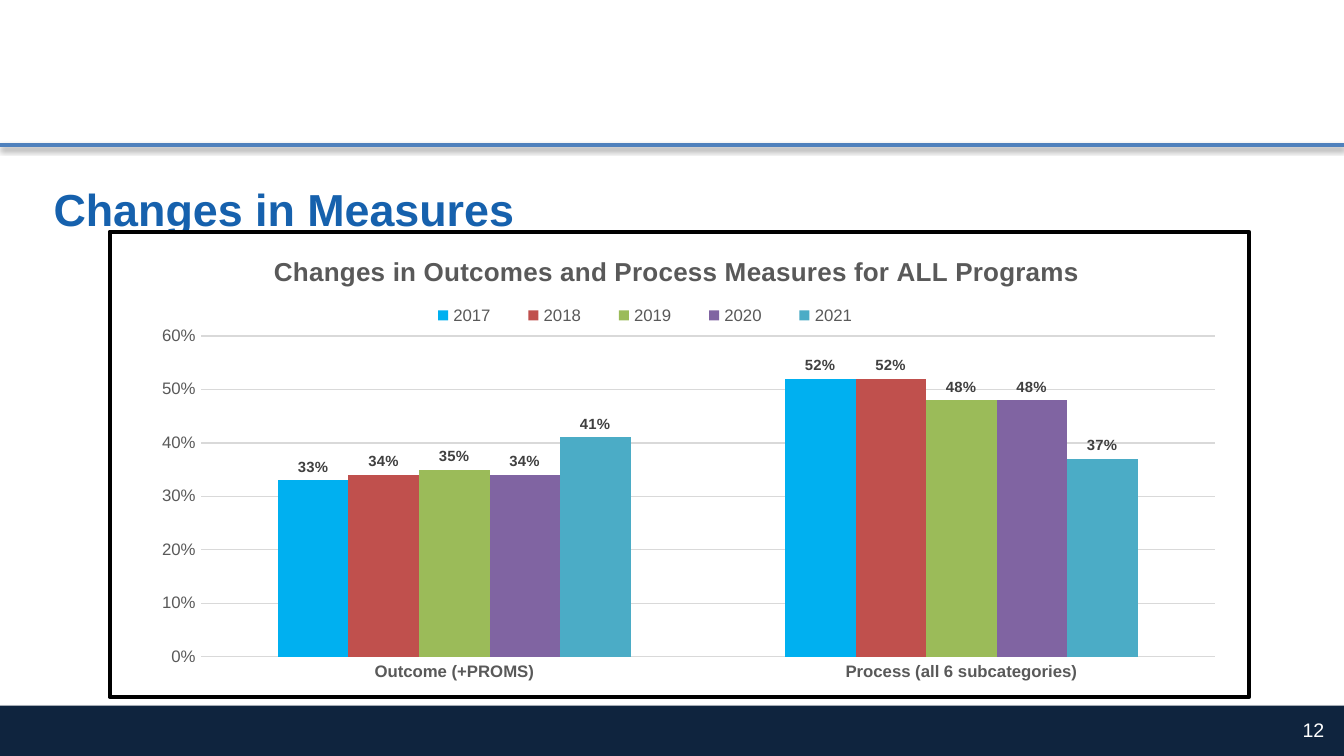
from lxml import etree
from pptx import Presentation
from pptx.chart.data import CategoryChartData
from pptx.dml.color import RGBColor
from pptx.enum.chart import XL_CHART_TYPE, XL_LABEL_POSITION, XL_LEGEND_POSITION, XL_TICK_MARK
from pptx.enum.shapes import MSO_CONNECTOR, MSO_SHAPE
from pptx.enum.text import MSO_ANCHOR, PP_ALIGN
from pptx.oxml import parse_xml
from pptx.oxml.ns import nsdecls, qn
from pptx.util import Pt

COLUMN = XL_CHART_TYPE.COLUMN_CLUSTERED
OUTSIDE = XL_LABEL_POSITION.OUTSIDE_END
TOP = XL_LEGEND_POSITION.TOP
NO_TICK = XL_TICK_MARK.NONE
STRAIGHT = MSO_CONNECTOR.STRAIGHT
RECTANGLE = MSO_SHAPE.RECTANGLE
MIDDLE = MSO_ANCHOR.MIDDLE
LEFT, RIGHT = PP_ALIGN.LEFT, PP_ALIGN.RIGHT

COLORS = {
    "navy": "0F243E", "rule": "4F81BD", "heading": "1661AD", "white": "FFFFFF",
    "black": "000000", "grey": "595959", "label": "404040", "grid": "D9D9D9",
}
FORMATS = {
    "heading": {"size": Pt(24), "bold": True, "color": "heading"},
    "number": {"size": Pt(10.5), "bold": False, "color": "white"},
    "chart": {"size": Pt(10), "bold": False, "color": "black"},
    "chart_title": {"size": Pt(14), "bold": True, "color": "grey"},
    "categories": {"size": Pt(9), "bold": True, "color": "grey"},
    "values": {"size": Pt(9), "bold": False, "color": "grey"},
    "label": {"size": Pt(8), "bold": True, "color": "label"},
}
CATEGORIES = ["Outcome (+PROMS)", "Process (all 6 subcategories)"]
SERIES = {
    "2017": ("00B0F0", (0.33, 0.52)),
    "2018": ("C0504D", (0.34, 0.52)),
    "2019": ("9BBB59", (0.35, 0.48)),
    "2020": ("8064A2", (0.34, 0.48)),
    "2021": ("4BACC6", (0.41, 0.37)),
}


def rgb(name):
    """Return the named colour."""
    return RGBColor.from_string(COLORS[name])


def style_font(font, style):
    """Apply a named text format to a font."""
    font.name = "Arial"
    for attribute, value in FORMATS[style].items():
        if attribute == "color":
            font.color.rgb = rgb(value)
        else:
            setattr(font, attribute, value)


def add_shadow(shape, opacity, distance):
    """Give a shape a soft shadow falling straight down."""
    shape._element.spPr.append(parse_xml(
        f'<a:effectLst {nsdecls("a")}><a:outerShdw blurRad="{Pt(3.1)}" dist="{Pt(distance)}" '
        f'dir="5400000" rotWithShape="0"><a:srgbClr val="{COLORS["black"]}">'
        f'<a:alpha val="{opacity * 1000}"/></a:srgbClr></a:outerShdw></a:effectLst>'))


def add_text(slide, box, text, style, alignment):
    """Add one line of text, centred vertically in its box."""
    frame = slide.shapes.add_textbox(*map(Pt, box)).text_frame
    frame.word_wrap = True
    frame.vertical_anchor = MIDDLE
    paragraph = frame.paragraphs[0]
    paragraph.alignment = alignment
    run = paragraph.add_run()
    run.text = text
    style_font(run.font, style)


def add_header(slide, box):
    """Draw the rule at the top of the box and the heading below it."""
    left, top, width, height = box
    rule = slide.shapes.add_connector(STRAIGHT, Pt(left), Pt(top), Pt(left + width), Pt(top))
    rule.line.color.rgb = rgb("rule")
    rule.line.width = Pt(2)
    add_shadow(rule, 38, 1.6)
    add_text(slide, (left + 21.6, top + 13.7, 291.6, height - 13.7),
             "Changes in Measures", "heading", LEFT)


def add_footer(slide, box):
    """Draw the dark band and the slide number at its right."""
    left, top, width, height = box
    band = slide.shapes.add_shape(RECTANGLE, *map(Pt, box))
    band.fill.solid()
    band.fill.fore_color.rgb = rgb("navy")
    band.line.fill.background()
    add_shadow(band, 35, 1.8)
    add_text(slide, (left + width - 137.5, top + 2.2, 126, 21.6), "12", "number", RIGHT)


def set_layout(element, index, inner=False, **fractions):
    """Place a chart part by fractions of the chart area."""
    for layout in element.findall(qn("c:layout")):
        element.remove(layout)
    layout = etree.Element(qn("c:layout"))
    manual = etree.SubElement(layout, qn("c:manualLayout"))
    settings = {"layoutTarget": "inner"} if inner else {}
    settings.update(xMode="edge", yMode="edge", **fractions)
    for tag, value in settings.items():
        etree.SubElement(manual, qn(f"c:{tag}")).set("val", str(value))
    element.insert(index, layout)


def style_axes(chart):
    """Format both axes and the gridlines."""
    for axis, style in ((chart.category_axis, "categories"), (chart.value_axis, "values")):
        axis.major_tick_mark = axis.minor_tick_mark = NO_TICK
        style_font(axis.tick_labels.font, style)
    value_axis = chart.value_axis
    value_axis.minimum_scale, value_axis.maximum_scale, value_axis.major_unit = 0, 0.6, 0.1
    value_axis.tick_labels.number_format = "0%"
    value_axis.tick_labels.number_format_is_linked = False
    value_axis.format.line.fill.background()
    for line in (chart.category_axis.format.line, value_axis.major_gridlines.format.line):
        line.color.rgb = rgb("grid")
        line.width = Pt(0.75)


def style_series(plot):
    """Colour the columns and label them with their values."""
    plot.gap_width, plot.overlap = 219, 0
    plot.vary_by_categories = False
    for series in plot.series:
        series.format.fill.solid()
        series.format.fill.fore_color.rgb = RGBColor.from_string(SERIES[series.name][0])
        labels = series.data_labels
        settings = {"show_value": True, "position": OUTSIDE,
                    "number_format": "0%", "number_format_is_linked": False}
        for attribute, value in settings.items():
            setattr(labels, attribute, value)
        style_font(labels.font, "label")


def add_measures_chart(slide, box):
    """Add the framed column chart."""
    data = CategoryChartData(number_format="0%")
    data.categories = CATEGORIES
    for name, (_, values) in SERIES.items():
        data.add_series(name, values)
    chart = slide.shapes.add_chart(COLUMN, *map(Pt, box), data).chart
    style_font(chart.font, "chart")
    chart.has_title = True
    paragraph = chart.chart_title.text_frame.paragraphs[0]
    run = paragraph.add_run()
    run.text = "Changes in Outcomes and Process Measures for ALL Programs"
    style_font(run.font, "chart_title")
    chart.has_legend = True
    chart.legend.position = TOP
    chart.legend.include_in_layout = False
    style_font(chart.legend.font, "values")
    style_axes(chart)
    style_series(chart.plots[0])
    set_layout(chart.chart_title._element, 1, x=0.14, y=0.04)
    set_layout(chart.legend._element, 1, x=0.26, y=0.15, w=0.42, h=0.06)
    chart_part = chart._chartSpace.find(qn("c:chart"))
    set_layout(chart_part.find(qn("c:plotArea")), 0, inner=True,
               x=0.08, y=0.224, w=0.89, h=0.69)
    chart_part.addnext(parse_xml(
        f'<c:spPr {nsdecls("c", "a")}><a:solidFill><a:srgbClr val="{COLORS["white"]}"/></a:solidFill>'
        f'<a:ln w="{Pt(2.25)}"><a:solidFill><a:srgbClr val="{COLORS["black"]}"/></a:solidFill>'
        '<a:round/></a:ln></c:spPr>'))


def main():
    """Build and save the slide."""
    presentation = Presentation()
    presentation.slide_width, presentation.slide_height = Pt(720), Pt(405)
    slide = presentation.slides.add_slide(presentation.slide_layouts[6])
    add_footer(slide, (-8, 378, 736, 36.7))
    add_header(slide, (0, 77.8, 720, 54.7))
    add_measures_chart(slide, (57.6, 123.1, 612.7, 251.3))
    presentation.save("out.pptx")


if __name__ == "__main__":
    main()
